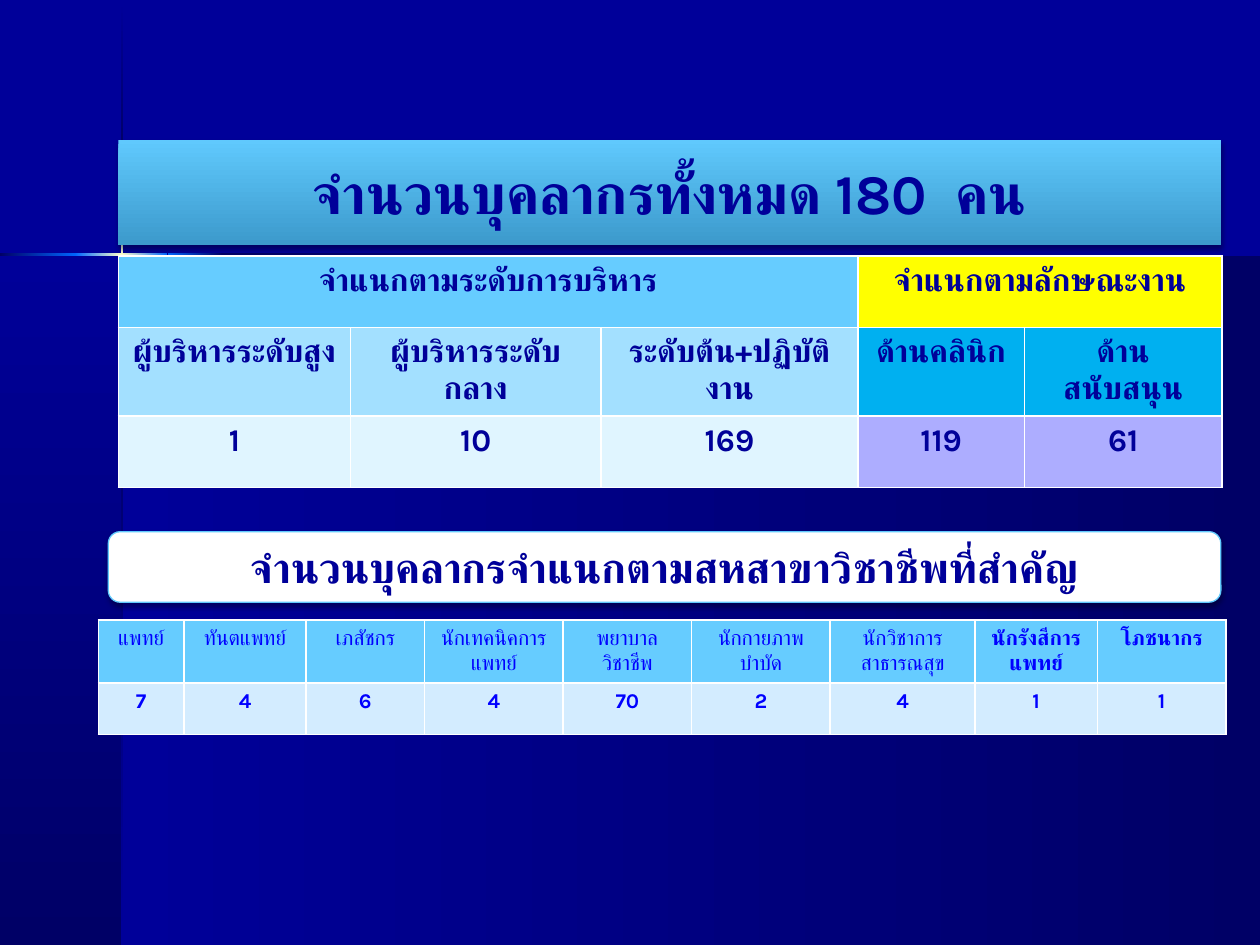
from lxml import etree
from pptx import Presentation
from pptx import util as u
from pptx.dml.color import RGBColor
from pptx.enum import shapes, text
from pptx.oxml import ns

NAVY, DEEP, BLUE, CREAM, WHITE = "000099", "000066", "0066FF", "FFFFCC", "FFFFFF"
SKY, PALE_SKY, ICE = "66CCFF", "A3E0FF", "E0F5FF"
YELLOW, AZURE, LILAC, MIST = "FFFF00", "00B0F0", "ADADFF", "D3ECFF"
TITLE_TOP, TITLE_BOTTOM, EDGE, INK = "60C9FD", "3C9ACC", "60C9FD", "0000FF"


def color(value):
    return RGBColor.from_string(value)


def add_xml(parent, tag, **attributes):
    return etree.SubElement(parent, ns.qn(tag),
                            {key: str(value) for key, value in attributes.items()})


def write(frame, words, size, ink=NAVY, bold=True, font="Karla"):
    """Put one centred paragraph into a text frame."""
    frame.word_wrap = True
    line = frame.paragraphs[0]
    line.alignment = text.PP_ALIGN.CENTER
    run = line.add_run()
    run.text = words
    run.font.name, run.font.size, run.font.bold = font, u.Pt(size), bold
    run.font.color.rgb = color(ink)
    add_xml(run.font._element, "a:cs", typeface=font)


class Sheet:
    """Current slide on a grid of 100 columns by 75 rows, with its style."""
    COLUMNS, ROWS = 100, 75

    def __init__(self, deck):
        self.deck = deck
        self.slide = deck.slides.add_slide(deck.slide_layouts[5])
        fill = self.slide.background.fill
        fill.solid()
        fill.fore_color.rgb = color(NAVY)

    def columns(self, count):
        return u.Emu(round(self.deck.slide_width * count / self.COLUMNS))

    def rows(self, count):
        return u.Emu(round(self.deck.slide_height * count / self.ROWS))

    def box(self, left, top, width, height):
        return (self.columns(left), self.rows(top),
                self.columns(width), self.rows(height))

    def gradient(self, shape, colors, angle):
        shape.fill.gradient()
        grad = shape._element.spPr.find(ns.qn("a:gradFill"))
        stops = grad.find(ns.qn("a:gsLst"))
        for stop in list(stops):
            stops.remove(stop)
        for index, value in enumerate(colors):
            stop = add_xml(stops, "a:gs", pos=100000 * index // (len(colors) - 1))
            add_xml(stop, "a:srgbClr", val=value)
        grad.find(ns.qn("a:lin")).set("ang", str(angle * 60000))

    def shadow(self, shape):
        shape.shadow.inherit = False
        effects = shape._element.spPr.find(ns.qn("a:effectLst"))
        outer = add_xml(effects, "a:outerShdw", blurRad=u.Pt(3.1), dist=u.Pt(1.8),
                        dir=90 * 60000, rotWithShape=0)
        add_xml(add_xml(outer, "a:srgbClr", val="000000"), "a:alpha", val=35000)

    def panel(self, left, top, width, height, colors, angle):
        panel = self.slide.shapes.add_shape(
            shapes.MSO_SHAPE.RECTANGLE, *self.box(left, top, width, height))
        panel.shadow.inherit = False
        panel.line.fill.background()
        self.gradient(panel, colors, angle)

    def title(self, left, top, width, height, words):
        title = self.slide.shapes.title
        title.left, title.top, title.width, title.height = self.box(left, top, width, height)
        self.slide.shapes._spTree.append(title._element)  # in front of the backdrop
        self.gradient(title, (TITLE_TOP, TITLE_BOTTOM), 90)
        self.shadow(title)
        title.text_frame.vertical_anchor = text.MSO_ANCHOR.MIDDLE
        title.text_frame.auto_size = text.MSO_AUTO_SIZE.SHAPE_TO_FIT_TEXT
        write(title.text_frame, words, 32)

    def banner(self, left, top, width, height, words):
        banner = self.slide.shapes.add_shape(
            shapes.MSO_SHAPE.ROUNDED_RECTANGLE, *self.box(left, top, width, height))
        banner.fill.solid()
        banner.fill.fore_color.rgb = color(WHITE)
        banner.line.color.rgb = color(EDGE)
        banner.line.width = u.Pt(0.75)
        self.shadow(banner)
        banner.text_frame.auto_size = text.MSO_AUTO_SIZE.SHAPE_TO_FIT_TEXT
        write(banner.text_frame, words, 24)

    def cell(self, cell, fill, words, **style):
        for side in ("a:lnL", "a:lnR", "a:lnT", "a:lnB"):
            border = add_xml(cell._tc.get_or_add_tcPr(), side, w=u.Pt(1))
            add_xml(add_xml(border, "a:solidFill"), "a:srgbClr", val=WHITE)
        cell.fill.solid()
        cell.fill.fore_color.rgb = color(fill)
        if words:
            write(cell.text_frame, words, **style)

    def table(self, left, top, widths, heights, content, style, merges=()):
        """Each content cell is (words, fill, bold); None continues a merge."""
        table = self.slide.shapes.add_table(
            len(heights), len(widths),
            *self.box(left, top, sum(widths), sum(heights))).table
        for column, width in zip(table.columns, widths):
            column.width = self.columns(width)
        for row, height in zip(table.rows, heights):
            row.height = self.rows(height)
        for row, first, last in merges:
            table.cell(row, first).merge(table.cell(row, last))
        for r, line in enumerate(content):
            for c, (words, fill, bold) in enumerate(line):
                self.cell(table.cell(r, c), fill, words, bold=bold, **style)


def backdrop(sheet):
    # Two shaded panels below the horizon
    sheet.panel(9.7, 20.2, 90.3, 54.8, (NAVY, DEEP), 0)
    sheet.panel(0, 20.2, 9.7, 54.8, (NAVY, DEEP), 90)
    # Thin light streaks that cross at the corner of the panels
    fade_in, fade_out, glow = (DEEP, BLUE), (BLUE, DEEP), (BLUE, CREAM, BLUE)
    for start, end, colors in ((0.1, 12.1, (NAVY, DEEP)), (28.2, 75, (DEEP, NAVY)),
                               (23.8, 28.2, fade_out), (12.1, 16.5, fade_in),
                               (16.5, 23.8, glow)):
        sheet.panel(9.6, start, 0.2, end - start, colors, 90)
    for start, end, colors in ((17.7, 100, (DEEP, NAVY)), (0, 6.1, fade_in),
                               (13.3, 17.7, fade_out), (6, 13.3, glow)):
        sheet.panel(start, 20.1, end - start, 0.2, colors, 0)


def main():
    deck = Presentation()
    deck.slide_width, deck.slide_height = u.Inches(10), u.Inches(7.5)
    sheet = Sheet(deck)
    backdrop(sheet)

    # Total staff
    sheet.title(9.4, 11.7, 87.5, 7.1, "จำนวนบุคลากรทั้งหมด 180  คน")

    # Staff by management level and by kind of work
    groups = ("จำแนกตามระดับการบริหาร", None, None, "จำแนกตามลักษณะงาน", None)
    levels = ("ผู้บริหารระดับสูง", "ผู้บริหารระดับกลาง", "ระดับต้น+ปฏิบัติงาน",
              "ด้านคลินิก", "ด้านสนับสนุน")
    counts = ("1", "10", "169", "119", "61")
    shades = ((SKY, YELLOW), (PALE_SKY, AZURE), (ICE, LILAC))
    staff = [[(words, level if c < 3 else work, True) for c, words in enumerate(line)]
             for line, (level, work) in zip((groups, levels, counts), shades)]
    sheet.table(9.4, 20.3, (18.4, 19.9, 20.4, 13.2, 15.7), (5.7, 7, 5.7), staff,
                dict(size=18), merges=((0, 0, 2), (0, 3, 4)))

    # Staff by profession
    sheet.banner(8.6, 42.2, 88.3, 5.6, "จำนวนบุคลากรจำแนกตามสหสาขาวิชาชีพที่สำคัญ")
    professions = (
        ("แพทย์", 7, 6.8), ("ทันตแพทย์", 4, 9.7), ("เภสัชกร", 6, 9.4),
        ("นักเทคนิคการแพทย์", 4, 11), ("พยาบาลวิชาชีพ", 70, 10.2),
        ("นักกายภาพ บำบัด", 2, 11), ("นักวิชาการสาธารณสุข", 4, 11.5),
        ("นักรังสีการแพทย์", 1, 9.7), ("โภชนากร", 1, 10.2))
    names, numbers, widths = zip(*professions)
    sheet.table(7.8, 49.2, widths, (5, 4.1),
                [[(name, SKY, c >= 7) for c, name in enumerate(names)],
                 [(str(number), MIST, True) for number in numbers]],
                dict(size=12, ink=INK))

    deck.save("out.pptx")


if __name__ == "__main__":
    main()
